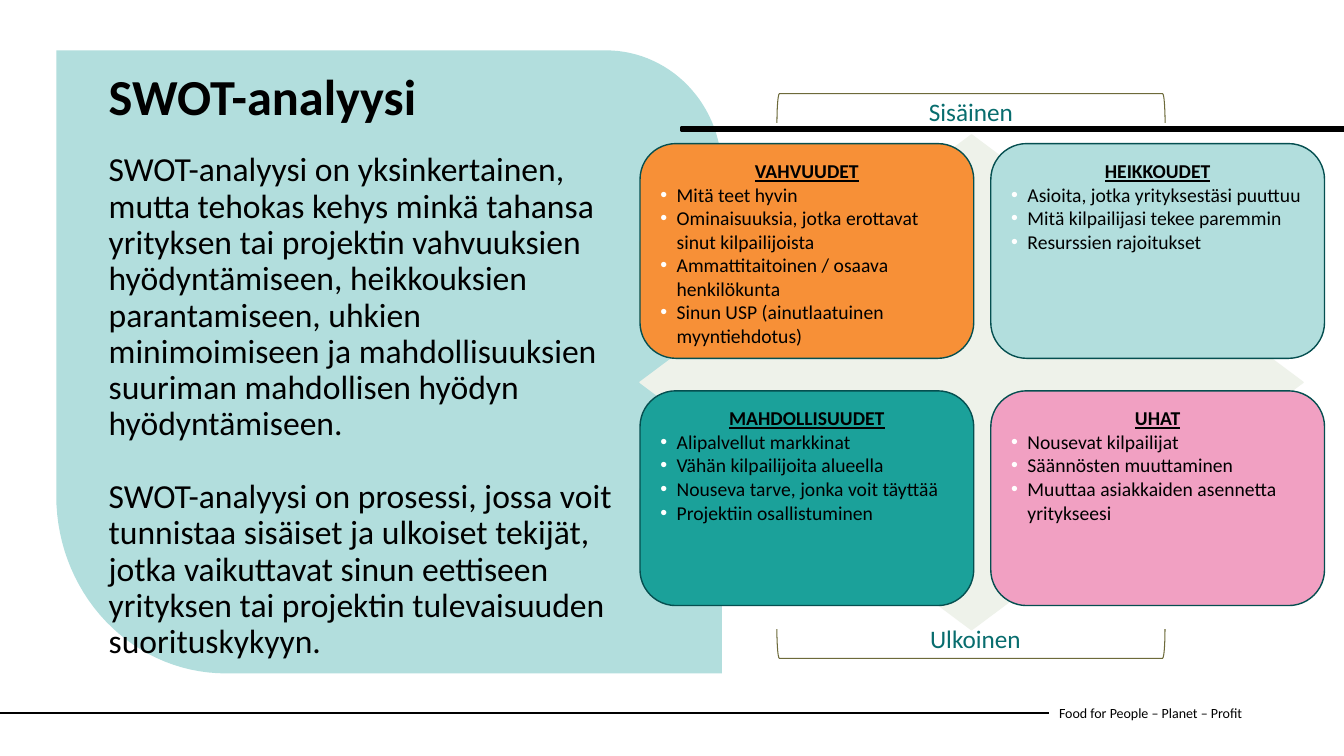
import math
from dataclasses import dataclass

import lxml.etree
import pptx
import pptx.dml.color
import pptx.enum.shapes
import pptx.enum.text
import pptx.oxml.ns
import pptx.util

Cm = pptx.util.Cm
Pt = pptx.util.Pt
qn = pptx.oxml.ns.qn
SHAPES = pptx.enum.shapes.MSO_SHAPE
ALIGN = pptx.enum.text.PP_ALIGN
ANCHOR = pptx.enum.text.MSO_ANCHOR

FONT = "Calibri"
BLACK, WHITE = "000000", "FFFFFF"
AQUA, DARK_TEAL, LABEL_TEAL = "B2DEDD", "054F50", "086D6E"
MIST, OLIVE = "EEF2EA", "6D6A3A"

CARD_LEFT, CARD_TOP = 16.13, 3.62
CARD_WIDTH, CARD_HEIGHT = 8.41, 5.41
COLUMN_STEP, ROW_STEP = 8.84, 6.23
BULLET_INDENT = 0.41


@dataclass(frozen=True)
class Card:
    column: int
    row: int
    color: str
    heading: str
    points: tuple[str, ...]


@dataclass(frozen=True)
class Axis:
    label: str
    label_left: float
    label_top: float
    label_width: float
    bracket_top: float
    rotation: int


CARDS = (
    Card(0, 0, "F79037", "VAHVUUDET", (
        "Mitä teet hyvin",
        "Ominaisuuksia, jotka erottavat sinut kilpailijoista",
        "Ammattitaitoinen / osaava henkilökunta",
        "Sinun USP (ainutlaatuinen myyntiehdotus)")),
    Card(1, 0, AQUA, "HEIKKOUDET", (
        "Asioita, jotka yrityksestäsi puuttuu",
        "Mitä kilpailijasi tekee paremmin",
        "Resurssien rajoitukset")),
    Card(0, 1, "1BA19A", "MAHDOLLISUUDET", (
        "Alipalvellut markkinat",
        "Vähän kilpailijoita alueella",
        "Nouseva tarve, jonka voit täyttää",
        "Projektiin osallistuminen")),
    Card(1, 1, "F1A0C2", "UHAT", (
        "Nousevat kilpailijat",
        "Säännösten muuttaminen",
        "Muuttaa asiakkaiden asennetta yritykseesi")),
)

AXES = (
    Axis("Sisäinen", 23.16, 2.31, 2.64, -2.16, 90),
    Axis("Ulkoinen", 23.19, 15.57, 3.58, 11.33, 270),
)

INTRODUCTION = (
    "SWOT-analyysi on yksinkertainen, mutta tehokas kehys minkä tahansa yrityksen tai "
    "projektin vahvuuksien hyödyntämiseen, heikkouksien parantamiseen, uhkien "
    "minimoimiseen ja mahdollisuuksien suuriman mahdollisen hyödyn hyödyntämiseen.",
    "SWOT-analyysi on prosessi, jossa voit tunnistaa sisäiset ja ulkoiset tekijät, jotka "
    "vaikuttavat sinun eettiseen yrityksen tai projektin tulevaisuuden suorituskykyyn.",
)


def rgb(color: str) -> pptx.dml.color.RGBColor:
    return pptx.dml.color.RGBColor.from_string(color)


def style_shape(shape, fill: str = "", line: str = "", line_width: float = 1) -> None:
    shape.shadow.inherit = False
    shape.fill.background()
    shape.line.fill.background()
    if fill:
        shape.fill.solid()
        shape.fill.fore_color.rgb = rgb(fill)
    if line:
        shape.line.color.rgb = rgb(line)
        shape.line.width = Pt(line_width)


def add_shape(slide, kind, left: float, top: float, width: float, height: float, **style):
    shape = slide.shapes.add_shape(kind, Cm(left), Cm(top), Cm(width), Cm(height))
    style_shape(shape, **style)
    return shape


def add_bullet(paragraph) -> None:
    properties = paragraph._p.get_or_add_pPr()
    properties.set("marL", str(Cm(BULLET_INDENT)))
    properties.set("indent", str(-Cm(BULLET_INDENT)))
    bullet_color = lxml.etree.SubElement(properties, qn("a:buClr"))
    lxml.etree.SubElement(bullet_color, qn("a:srgbClr"), val=WHITE)
    lxml.etree.SubElement(properties, qn("a:buFont"), typeface="Arial")
    lxml.etree.SubElement(properties, qn("a:buChar"), char="•")


def write(frame, text: str, *, size: float, color: str = BLACK, bold: bool = False,
          underline: bool = False, align=ALIGN.LEFT, spacing: float = 1,
          after: float = 0, bullet: bool = False) -> None:
    """Fill the frame's empty first paragraph, or append a new one."""
    paragraph = frame.paragraphs[-1]
    if paragraph.runs:
        paragraph = frame.add_paragraph()
    paragraph.alignment = align
    paragraph.line_spacing = spacing
    paragraph.space_after = Pt(after)
    if bullet:
        add_bullet(paragraph)
    run = paragraph.add_run()
    run.text = text
    run.font.name, run.font.size = FONT, Pt(size)
    run.font.bold, run.font.underline = bold, underline
    run.font.color.rgb = rgb(color)


def add_text_box(slide, left: float, top: float, width: float, height: float):
    frame = slide.shapes.add_textbox(Cm(left), Cm(top), Cm(width), Cm(height)).text_frame
    frame.word_wrap = True
    return frame


def quarter_arc(center_x: float, center_y: float, radius_x: float, radius_y: float,
                start: int) -> list[tuple[int, int]]:
    angles = [math.radians(start + 3 * step) for step in range(31)]
    return [(Cm(center_x + radius_x * math.cos(angle)),
             Cm(center_y + radius_y * math.sin(angle))) for angle in angles]


def add_panel(slide) -> None:
    left, top, right, bottom = 1.42, 1.27, 18.19, 16.97
    top_right = quarter_arc(right - 2.92, top + 3.02, 2.92, 3.02, 270)
    bottom_left = quarter_arc(left + 4.27, bottom - 4.47, 4.27, 4.47, 90)
    builder = slide.shapes.build_freeform(Cm(left), Cm(top))
    builder.add_line_segments([*top_right, (Cm(right), Cm(bottom)), *bottom_left])
    style_shape(builder.convert_to_shape(), fill=AQUA)


def add_footer(slide) -> None:
    rule = slide.shapes.add_connector(pptx.enum.shapes.MSO_CONNECTOR.STRAIGHT,
                                      Cm(0), Cm(17.96), Cm(26.44), Cm(17.96))
    rule.line.color.rgb = rgb(BLACK)
    rule.line.width = Pt(1.5)
    lxml.etree.SubElement(rule._element.spPr, qn("a:effectLst"))
    frame = add_text_box(slide, 26.44, 17.45, 6.93, 1.02)
    frame.vertical_anchor = ANCHOR.MIDDLE
    write(frame, "Food for People – Planet – Profit", size=10)


def add_card(slide, card: Card) -> None:
    left, top = CARD_LEFT + card.column * COLUMN_STEP, CARD_TOP + card.row * ROW_STEP
    frame = add_shape(slide, SHAPES.ROUNDED_RECTANGLE, left, top, CARD_WIDTH, CARD_HEIGHT,
                      fill=card.color, line=DARK_TEAL).text_frame
    frame.word_wrap = True
    frame.vertical_anchor = ANCHOR.TOP
    write(frame, card.heading, size=14, bold=True, underline=True, align=ALIGN.CENTER)
    for point in card.points:
        write(frame, point, size=14, bullet=True)


def add_axis(slide, axis: Axis) -> None:
    add_shape(slide, SHAPES.LEFT_BRACKET, 24.1, axis.bracket_top, 0.74, 9.78,
              line=OLIVE, line_width=0.75).rotation = axis.rotation
    frame = add_text_box(slide, axis.label_left, axis.label_top, axis.label_width, 1.02)
    write(frame, axis.label, size=18, color=LABEL_TEAL)


presentation = pptx.Presentation()
presentation.slide_width, presentation.slide_height = Cm(33.87), Cm(19.05)
slide = presentation.slides.add_slide(presentation.slide_layouts[6])

# Background
add_footer(slide)
add_panel(slide)
add_shape(slide, SHAPES.RECTANGLE, 17.17, 3.2, 16.7, 0.1,
          fill=BLACK, line=BLACK, line_width=1.93)
# Title and introduction
introduction = add_text_box(slide, 2.49, 3.73, 13.87, 9.75)
for text in INTRODUCTION:
    write(introduction, text, size=24, spacing=0.9, after=26)
title = add_text_box(slide, 2.49, 1.68, 13.87, 2.77)
write(title, "SWOT-analyysi", size=36, bold=True, spacing=0.9)
# SWOT matrix
add_shape(slide, SHAPES.DIAMOND, 16.13, 3.4, 16.71, 12.47, fill=MIST, line=MIST)
for card in CARDS:
    add_card(slide, card)
for axis in AXES:
    add_axis(slide, axis)
presentation.save("out.pptx")
